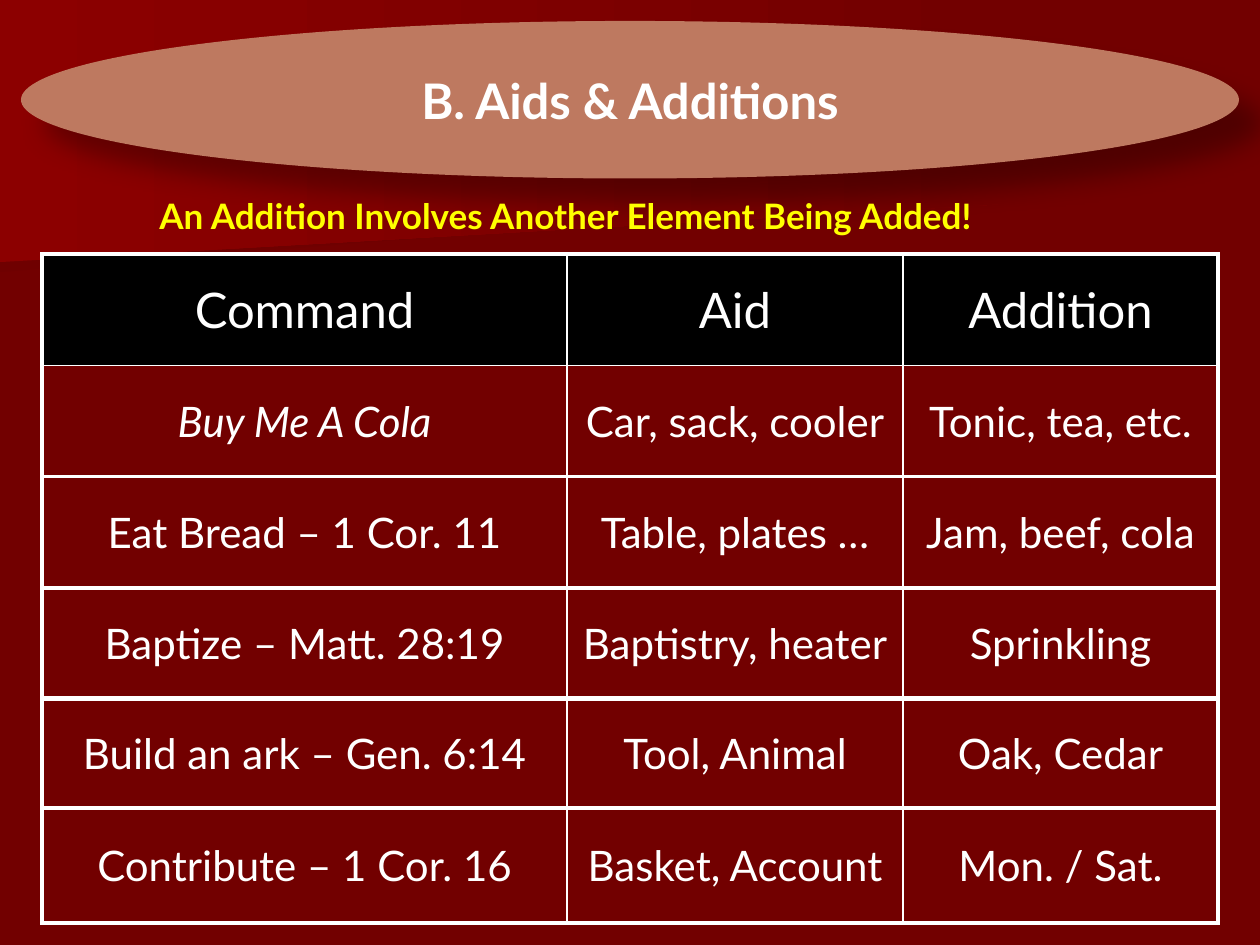
from lxml import etree
from pptx import Presentation
from pptx.dml.color import RGBColor
from pptx.enum.shapes import MSO_SHAPE
from pptx.enum.text import MSO_ANCHOR, PP_ALIGN
from pptx.oxml import parse_xml
from pptx.oxml.ns import nsdecls, qn
from pptx.util import Inches, Pt

OVAL = MSO_SHAPE.OVAL
MIDDLE = MSO_ANCHOR.MIDDLE
CENTER = PP_ALIGN.CENTER

MAROON = RGBColor(0x72, 0x00, 0x00)
DARK_MAROON = RGBColor(0x6F, 0x00, 0x00)
RED = RGBColor(0x8C, 0x00, 0x00)
CLAY = RGBColor(0xBE, 0x79, 0x60)
YELLOW = RGBColor(0xFF, 0xFF, 0x00)
WHITE = RGBColor(0xFF, 0xFF, 0xFF)
BLACK = RGBColor(0x00, 0x00, 0x00)

FONT = "Lato"
THIN, THICK = 1, 2.25
COLUMNS = (25, 16, 15)

# Each band: top and row height in grid units, then its rows.
BANDS = (
    (12.1, 5.3, (("Command", "Aid", "Addition"),
                 ("Buy Me A Cola", "Car, sack, cooler", "Tonic, tea, etc."))),
    (22.7, 5.3, (("Eat Bread – 1 Cor. 11", "Table, plates …", "Jam, beef, cola"),)),
    (28, 5.3, (("Baptize – Matt. 28:19", "Baptistry, heater", "Sprinkling"),)),
    (33.2, 5.3, (("Build an ark – Gen. 6:14", "Tool, Animal", "Oak, Cedar"),)),
    (38.45, 5.5, (("Contribute – 1 Cor. 16", "Basket, Account", "Mon. / Sat."),)),
)


def grid(units):
    """Length of grid units; the slide is 60 columns by 45 rows."""
    return Inches(units / 6)


def style(paragraph, size, color, bold=False, italic=False):
    font = paragraph.font
    font.name, font.size = FONT, Pt(size)
    font.bold, font.italic = bold, italic
    font.color.rgb = color


def add_wedge(slide, box, right_bottom, start_color):
    """Fill the box with a gradient, its bottom edge rising to right_bottom."""
    left, top, width, height = (Inches(length) for length in box)
    builder = slide.shapes.build_freeform(left, top)
    builder.add_line_segments([
        (left + width, top),
        (left + width, top + int(height * right_bottom)),
        (left, top + height),
    ])
    wedge = builder.convert_to_shape()
    wedge.shadow.inherit = False
    wedge.line.fill.background()
    wedge.fill.gradient()
    wedge.fill.gradient_angle = 0
    for stop, color in zip(wedge.fill.gradient_stops, (start_color, MAROON)):
        stop.color.rgb = color


def add_drop_shadow(shape):
    shape.shadow.inherit = False
    effects = shape._element.spPr.find(qn("a:effectLst"))
    effects.append(parse_xml(
        f'<a:outerShdw {nsdecls("a")} blurRad="{Pt(15)}" dist="{Pt(18)}" '
        'dir="2700000" algn="tl" rotWithShape="0"><a:srgbClr val="000000">'
        '<a:alpha val="30000"/></a:srgbClr></a:outerShdw>'))


def add_title(slide, box):
    ellipse = slide.shapes.add_shape(OVAL, *map(grid, box))
    ellipse.fill.solid()
    ellipse.fill.fore_color.rgb = CLAY
    ellipse.line.fill.background()
    add_drop_shadow(ellipse)
    frame = ellipse.text_frame
    frame.word_wrap = False
    frame.vertical_anchor = MIDDLE
    heading = frame.paragraphs[0]
    heading.text = "B. Aids & Additions"
    heading.alignment = CENTER
    style(heading, 28, WHITE, bold=True)


def add_subtitle(slide, box):
    frame = slide.shapes.add_textbox(*map(grid, box)).text_frame
    frame.word_wrap = True
    claim = frame.paragraphs[0]
    claim.text = "An Addition Involves Another Element Being Added!"
    style(claim, 20, YELLOW, bold=True)


def set_borders(cell, widths):
    """Draw white borders; widths are left, right, top, bottom in points."""
    properties = cell._tc.get_or_add_tcPr()
    for side, width in zip("LRTB", widths):
        line = etree.SubElement(properties, qn(f"a:ln{side}"), w=str(Pt(width)))
        fill = etree.SubElement(line, qn("a:solidFill"))
        etree.SubElement(fill, qn("a:srgbClr"), val=str(WHITE))


def add_band(slide, left, top, row_height, rows):
    """Place one table; a first row followed by others is the header."""
    table = slide.shapes.add_table(
        len(rows), len(COLUMNS), grid(left), grid(top),
        grid(sum(COLUMNS)), grid(row_height * len(rows))).table
    table.first_row = table.horz_banding = False
    for column, width in zip(table.columns, COLUMNS):
        column.width = grid(width)
    last_row, last_column = len(rows) - 1, len(COLUMNS) - 1
    for r, row in enumerate(rows):
        is_header = r < last_row
        for c, wording in enumerate(row):
            cell = table.cell(r, c)
            set_borders(cell, (
                THICK if c == 0 else THIN,
                THICK if c == last_column else THIN,
                THICK if r == 0 else THIN,
                THICK if r == last_row else THIN))
            if is_header:
                cell.fill.solid()
                cell.fill.fore_color.rgb = BLACK
            else:
                cell.fill.background()
            cell.vertical_anchor = MIDDLE
            entry = cell.text_frame.paragraphs[0]
            entry.text = wording
            entry.alignment = CENTER
            style(entry, 28 if is_header else 24, WHITE,
                  italic=wording.startswith("Buy"))


def main():
    deck = Presentation()
    deck.slide_width, deck.slide_height = grid(60), grid(45)
    slide = deck.slides.add_slide(deck.slide_layouts[6])
    slide.background.fill.solid()
    slide.background.fill.fore_color.rgb = MAROON
    add_wedge(slide, (0, 1.01, 7.79, 1.15), 0.45, DARK_MAROON)
    add_wedge(slide, (0, 0, 7.92, 2.08), 0.78, RED)
    add_title(slide, (1, 1, 58, 7.5))
    add_subtitle(slide, (7, 8.95, 44.7, 2.6))
    for top, row_height, rows in BANDS:
        add_band(slide, 2, top, row_height, rows)
    deck.save("out.pptx")


if __name__ == "__main__":
    main()
